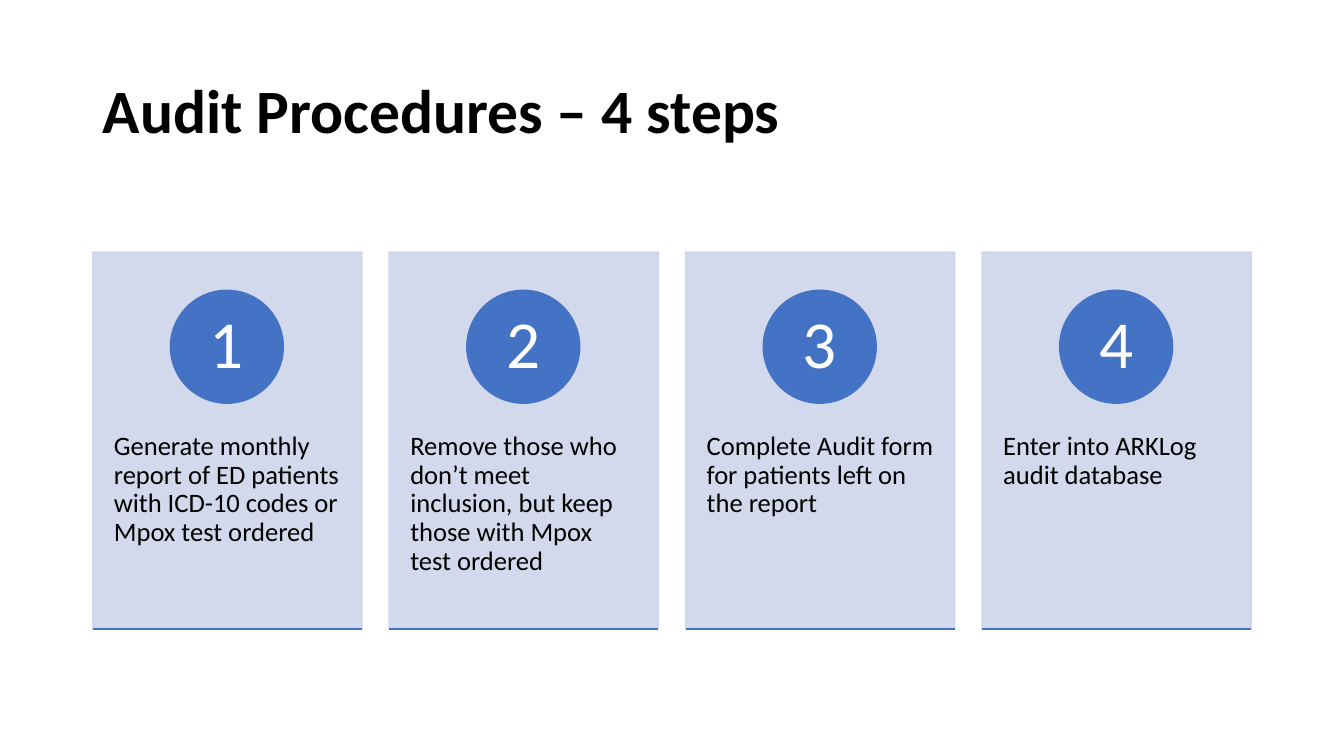
import pptx
import pptx.util
import pptx.dml.color
import pptx.enum.shapes
import pptx.enum.text
import pptx.oxml.ns
import pptx.oxml.xmlchemy

PX = 9144
FONT = "Calibri"
BLUE = "4472C4"
PALE = "CFD5EA"
BLACK = "000000"
WHITE = "FFFFFF"
STEPS = [
    "Generate monthly report of ED patients with ICD-10 codes or Mpox test ordered",
    "Remove those who don’t meet inclusion, but keep those with Mpox test ordered",
    "Complete Audit form for patients left on the report",
    "Enter into ARKLog audit database",
]
MIDDLE = pptx.enum.text.MSO_ANCHOR.MIDDLE
TOP = pptx.enum.text.MSO_ANCHOR.TOP
LEFT = pptx.enum.text.PP_ALIGN.LEFT
CENTER = pptx.enum.text.PP_ALIGN.CENTER


def px(*lengths):
    """Turn pixel lengths into EMU."""
    return [pptx.util.Emu(length * PX) for length in lengths]


def paint(color_format, color):
    """Give a colour format a hex colour."""
    color_format.rgb = pptx.dml.color.RGBColor.from_string(color)


def write(shape, text, size, color, align, anchor, insets, bold=False):
    """Put one formatted paragraph into a shape."""
    frame = shape.text_frame
    frame.text = text
    frame.word_wrap = True
    frame.auto_size = pptx.enum.text.MSO_AUTO_SIZE.NONE
    frame.vertical_anchor = anchor
    frame.margin_left, frame.margin_top = px(*insets)
    frame.margin_right, frame.margin_bottom = px(*insets)
    para = frame.paragraphs[0]
    para.alignment = align
    para.line_spacing = 0.9
    span = para.runs[0]
    span.font.name = FONT
    span.font.size = pptx.util.Pt(size)
    span.font.bold = bold
    paint(span.font.color, color)


def add_solid(page, kind, box, color, opacity=100):
    """Add a preset shape with fill and line of one colour."""
    shape = page.shapes.add_shape(kind, *px(*box))
    shape.shadow.inherit = False
    shape.fill.solid()
    paint(shape.fill.fore_color, color)
    paint(shape.line.color, color)
    shape.line.width = pptx.util.Pt(1)
    if opacity < 100:
        for tint in shape.element.spPr.iter(pptx.oxml.ns.qn("a:srgbClr")):
            alpha = pptx.oxml.xmlchemy.OxmlElement("a:alpha")
            alpha.set("val", str(opacity * 1000))
            tint.append(alpha)
    return shape


def add_rule(page, left, top, width):
    """Add a thin horizontal line."""
    rule = page.shapes.add_connector(
        pptx.enum.shapes.MSO_CONNECTOR.STRAIGHT, *px(left, top, left + width, top))
    paint(rule.line.color, BLUE)
    rule.line.width = pptx.util.Pt(1)
    rule.element.spPr.append(pptx.oxml.xmlchemy.OxmlElement("a:effectLst"))


def add_title(page, box, text):
    """Place and format the title placeholder."""
    title = page.shapes.title
    title.left, title.top, title.width, title.height = px(*box)
    write(title, text, 44, BLACK, LEFT, MIDDLE, (10, 5), bold=True)


def add_step(page, box, number, text):
    """Draw one numbered step card."""
    left, top, width, height = box
    kinds = pptx.enum.shapes.MSO_SHAPE
    add_solid(page, kinds.RECTANGLE, box, PALE, opacity=90)
    note = page.shapes.add_textbox(*px(left, top + 143, width, 225))
    write(note, text, 19, BLACK, LEFT, TOP, (21, 36))
    size = 112
    circle_box = (left + (width - size) // 2, top + 38, size, size)
    circle = add_solid(page, kinds.OVAL, circle_box, BLUE)
    write(circle, str(number), 48, WHITE, CENTER, MIDDLE, (9, 1))
    add_rule(page, left, top + height, width)


def add_steps(page, box, steps, gap):
    """Lay out the step cards in equal columns."""
    left, top, width, height = box
    card_width = (width - gap * (len(steps) - 1)) // len(steps)
    for index, text in enumerate(steps):
        card_left = left + index * (card_width + gap)
        add_step(page, (card_left, top, card_width, height), index + 1, text)


def main():
    """Build and save the deck."""
    deck = pptx.Presentation()
    deck.slide_width, deck.slide_height = px(1333, 750)
    page = deck.slides.add_slide(deck.slide_layouts[5])
    add_title(page, (92, 40, 1150, 145), "Audit Procedures – 4 steps")
    add_steps(page, (92, 250, 1149, 374), STEPS, 27)
    deck.save("out.pptx")


if __name__ == "__main__":
    main()
